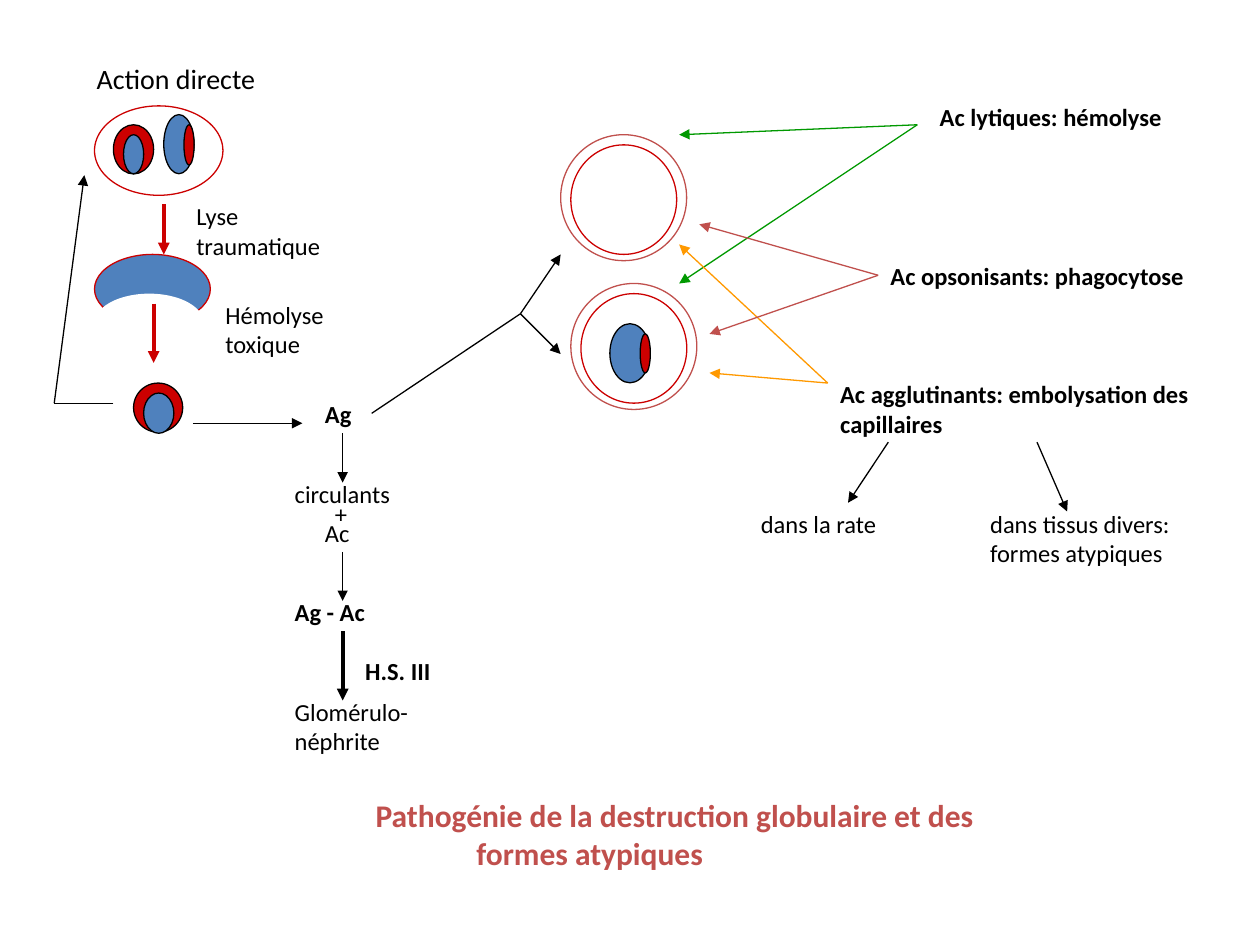
"""Build the slide on how red cells are destroyed and atypical forms arise."""
from dataclasses import dataclass
from typing import Optional

from lxml.etree import SubElement
from pptx import Presentation
from pptx.dml.color import RGBColor
from pptx.enum.shapes import MSO_CONNECTOR, MSO_SHAPE
from pptx.enum.text import MSO_ANCHOR, MSO_AUTO_SIZE, PP_ALIGN
from pptx.oxml.ns import qn
from pptx.util import Pt


@dataclass(frozen=True)
class Theme:
    font: str = "Calibri"
    black: str = "000000"
    white: str = "FFFFFF"
    red: str = "CC0000"
    blue: str = "4F81BD"
    brick: str = "C0504D"
    green: str = "009900"
    orange: str = "FF9900"
    title: int = 18
    heading: int = 16
    body: int = 14
    thin: float = 0.75
    thick: float = 2.25


T = Theme()


@dataclass(frozen=True)
class Oval:
    x: float
    y: float
    w: float
    h: float
    fill: Optional[str] = None
    line: Optional[str] = T.black


@dataclass(frozen=True)
class Label:
    text: str
    x: float
    y: float
    w: float
    h: float = 23.8
    bold: bool = False
    size: int = T.body


@dataclass(frozen=True)
class Arrow:
    x1: float
    y1: float
    x2: float
    y2: float
    color: str = T.black
    width: float = T.thin
    head: bool = True


def host_cell(x: float, y: float) -> list[Oval]:
    return [Oval(x, y, 72, 72, T.white, T.brick),
            Oval(x + 5.8, y + 5.8, 60.5, 62.6, T.white, T.red)]


def fan(x: float, y: float, color: str, *ends: tuple[float, float]) -> list[Arrow]:
    return [Arrow(x, y, ex, ey, color) for ex, ey in ends]


AXIS = 195.8
LEFT = 161.3

OVALS = [
    Oval(54, 60.5, 73.4, 51.1, None, T.red),
    Oval(93.6, 65.5, 17.3, 33.8, T.blue),
    Oval(105.1, 71.3, 5.8, 23, T.red),
    Oval(64.8, 71.3, 23, 28.1, T.red),
    Oval(70.6, 77, 11.5, 22.3, T.blue),
    Oval(54, 145.4, 66.2, 39.6, T.blue, T.red),
    Oval(54, 167.8, 62.6, 33.8, T.white, None),
    Oval(76.3, 218.9, 28.1, 28.1, T.red),
    Oval(82.1, 224.6, 17.3, 23, T.blue),
    *host_cell(320.4, 77),
    *host_cell(326.2, 162),
    Oval(348.5, 185, 23, 33.8, T.blue),
    Oval(365.8, 190.8, 5.8, 22.3, T.red),
]

ARROWS = [
    Arrow(93.6, 116.6, 93.6, 145.4, T.red, T.thick),
    Arrow(87.8, 173.5, 87.8, 207.4, T.red, T.thick),
    Arrow(64.8, 230.4, 31, 230.4, head=False),
    Arrow(31, 230.4, 48.2, 100.1),
    Arrow(110.2, 241.9, 172.8, 241.9),
    Arrow(AXIS, 247.7, AXIS, 275.8),
    Arrow(AXIS, 315.4, AXIS, 343.4),
    Arrow(AXIS, 360.7, AXIS, 400.3, width=T.thick),
    Arrow(212.4, 236.2, 297.4, 179.3, head=False),
    *fan(297.4, 179.3, T.black, (320.4, 145.4), (320.4, 202.3)),
    *fan(524.2, 71.3, T.green, (388.1, 77), (388.1, 162)),
    *fan(473, 218.9, T.orange, (388.1, 139.7), (405.4, 213.1)),
    Arrow(507.6, 252.7, 484.6, 287.3),
    Arrow(592.6, 252.7, 609.8, 292.3),
]

OPSONINS = Label("Ac opsonisants: phagocytose", 501.8, 145.4, 218.2, bold=True)
OPSONIN_ARROWS = fan(501.8, 157.3, T.brick, (399.6, 128.2), (405.4, 190.8))

LABELS = [
    Label("Action directe", 48.2, 31.7, 130.3, 26.6, size=T.heading),
    Label("Lyse traumatique", 105.1, 111.6, 90.7, 41),
    Label("Hémolyse toxique", 121.7, 167.8, 90.7, 41),
    Label("Ag", 178.6, 224.6, 73.4, bold=True),
    Label("circulants", LEFT, 270, 85),
    Label("+", 184.3, 281.5, 33.8),
    Label("Ac", 178.6, 292.3, 62.6),
    Label("Ag - Ac", LEFT, 337.7, 102.2, bold=True),
    Label("H.S. III", 201.6, 371.5, 79.2, bold=True),
    Label("Glomérulo-néphrite", LEFT, 394.6, 85, 41),
    Label("Ac lytiques: hémolyse", 529.9, 54.7, 164.2, bold=True),
    Label("Ac agglutinants: embolysation des capillaires", 473, 213.1, 215.3, 41, True),
    Label("dans la rate", 427.7, 287.3, 102.2),
    Label("dans tissus divers: formes atypiques", 558.7, 287.3, 118.8, 57.6),
]


def apply(obj, fmt: dict) -> None:
    for name, value in fmt.items():
        setattr(obj, name, value)


def write(sp, text: str, size: int, color: str, bold: bool):
    tf = sp.text_frame
    apply(tf, {"word_wrap": True, "auto_size": MSO_AUTO_SIZE.SHAPE_TO_FIT_TEXT,
               "vertical_anchor": MSO_ANCHOR.TOP})
    p = tf.paragraphs[0]
    p.alignment = PP_ALIGN.LEFT
    r = p.add_run()
    r.text = text
    apply(r.font, {"name": T.font, "size": Pt(size), "bold": bold})
    r.font.color.rgb = RGBColor.from_string(color)
    return p


def add_oval(s, o: Oval) -> None:
    sp = s.shapes.add_shape(MSO_SHAPE.OVAL, Pt(o.x), Pt(o.y), Pt(o.w), Pt(o.h))
    sp.shadow.inherit = False
    for fmt, color in ((sp.fill, o.fill), (sp.line.fill, o.line)):
        if color:
            fmt.solid()
            fmt.fore_color.rgb = RGBColor.from_string(color)
        else:
            fmt.background()
    if o.line:
        sp.line.width = Pt(T.thin)


def add_arrow(s, a: Arrow):
    c = s.shapes.add_connector(MSO_CONNECTOR.STRAIGHT,
                               Pt(a.x1), Pt(a.y1), Pt(a.x2), Pt(a.y2))
    c.line.color.rgb = RGBColor.from_string(a.color)
    c.line.width = Pt(a.width)
    if a.head:
        SubElement(c.line._get_or_add_ln(), qn("a:tailEnd"), type="triangle")
    SubElement(c._element.spPr, qn("a:effectLst"))
    return c


def add_label(s, t: Label):
    sp = s.shapes.add_textbox(Pt(t.x), Pt(t.y), Pt(t.w), Pt(t.h))
    write(sp, t.text, t.size, T.black, t.bold)
    return sp


def set_title(s, text: str) -> None:
    sp = s.shapes.title
    apply(sp, {"left": Pt(201.6), "top": Pt(451.4), "width": Pt(368.6), "height": Pt(50.4)})
    p = write(sp, text, T.title, T.brick, True)
    pPr = p._p.get_or_add_pPr()
    pPr.set("marL", str(Pt(63.4)))
    pPr.set("indent", str(Pt(-57.6)))


def main() -> None:
    prs = Presentation()
    apply(prs, {"slide_width": Pt(720), "slide_height": Pt(540)})
    s = prs.slides.add_slide(prs.slide_layouts[5])
    set_title(s, "Pathogénie de la destruction globulaire et des formes atypiques")
    for o in OVALS:
        add_oval(s, o)
    for a in ARROWS:
        add_arrow(s, a)
    for t in LABELS:
        add_label(s, t)
    box = add_label(s, OPSONINS)
    for a in OPSONIN_ARROWS:
        add_arrow(s, a).begin_connect(box, 1)
    prs.save("out.pptx")


if __name__ == "__main__":
    main()
